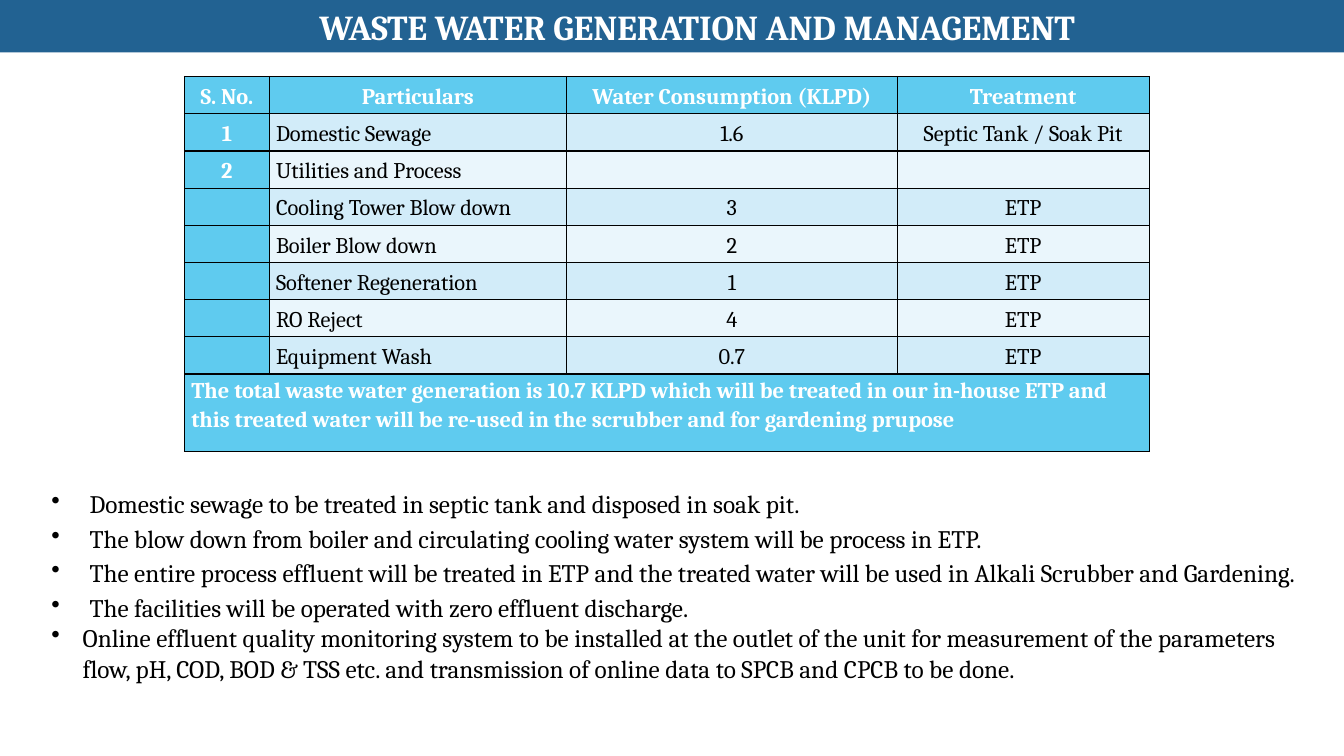
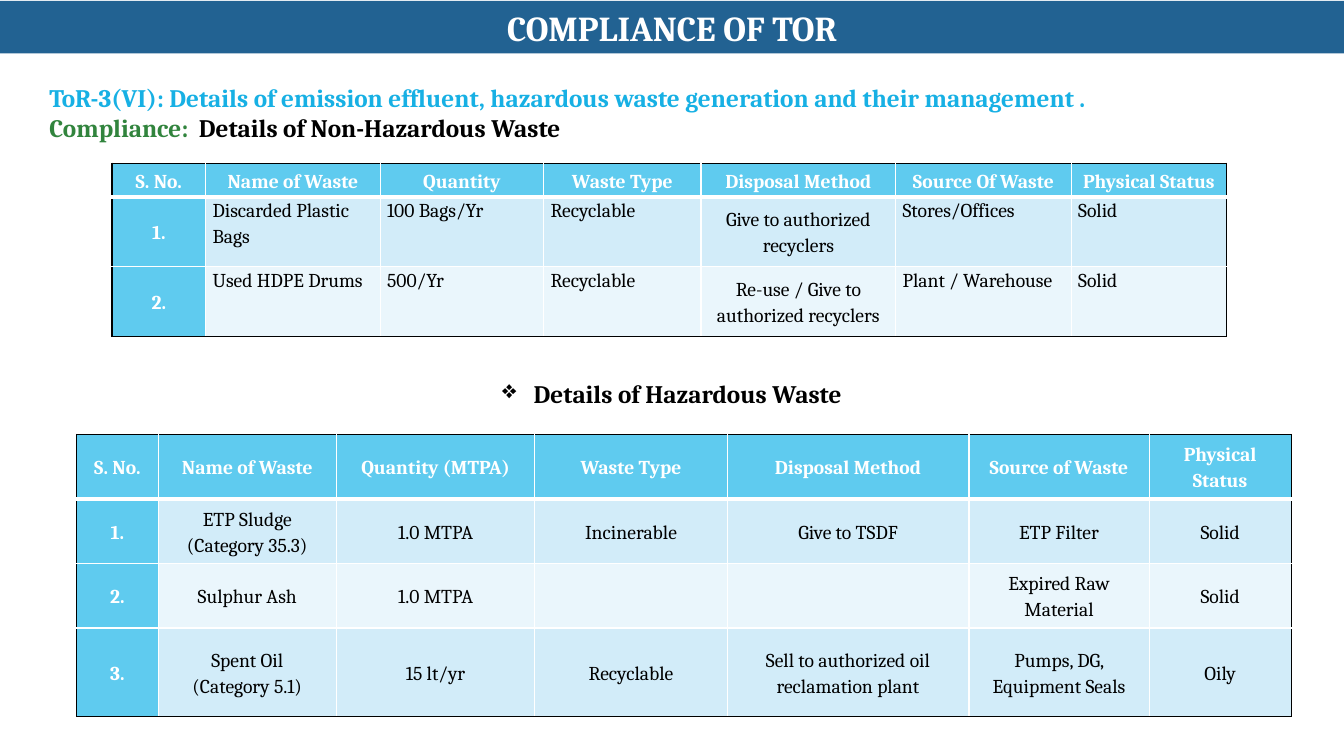
from dataclasses import dataclass

from lxml.etree import SubElement
from pptx import Presentation
from pptx.dml.color import RGBColor
from pptx.enum.shapes import MSO_SHAPE
from pptx.enum.text import MSO_ANCHOR, MSO_AUTO_SIZE, PP_ALIGN
from pptx.oxml.ns import qn
from pptx.util import Inches, Pt

WIDTH, HEIGHT = Inches(13.33), Inches(7.5)
ALIGN = {"l": PP_ALIGN.LEFT, "c": PP_ALIGN.CENTER}


@dataclass(frozen=True)
class Theme:
    font: str = "Cambria"
    band: str = "226292"
    head: str = "5FCBEF"
    odd: str = "D2ECF9"
    even: str = "EAF6FC"
    topic: str = "17B0E4"
    reply: str = "31843D"
    ink: str = "000000"
    paper: str = "FFFFFF"
    title: int = 25
    body: int = 18
    large: int = 16
    small: int = 14
    lead: float = 1.15


THEME = Theme()


def across(share):
    """Length of a percentage of the slide's width."""
    return round(WIDTH * share / 100)


def down(share):
    """Length of a percentage of the slide's height."""
    return round(HEIGHT * share / 100)


def place(left, top, width, height):
    return across(left), down(top), across(width), down(height)


def paint(fill, color):
    fill.solid()
    fill.fore_color.rgb = RGBColor.from_string(color)


def write(frame, text, size=THEME.body, color=THEME.ink, bold=False,
          align="l", lead=None, bullet=None, left=0, hang=0, tab=None):
    """Add one paragraph; text is a string or a list of (string, colour)."""
    para = frame.paragraphs[0]
    if para.runs:
        para = frame.add_paragraph()
    para.alignment = ALIGN[align]
    if lead:
        para.line_spacing = lead
    props = para._p.get_or_add_pPr()
    if left or hang:
        props.set("marL", str(across(left + hang)))
        props.set("indent", str(-across(hang)))
    if bullet:
        SubElement(props, qn("a:buChar"), char=bullet)
    if tab:
        tabs = SubElement(props, qn("a:tabLst"))
        SubElement(tabs, qn("a:tab"), pos=str(across(tab)), algn="l")
    if not text:
        SubElement(para._p, qn("a:endParaRPr"), sz=str(size * 100))
        return
    for part, tint in [(text, color)] if isinstance(text, str) else text:
        run = para.add_run()
        run.text = part
        run.font.name = THEME.font
        run.font.size = Pt(size)
        run.font.bold = bold
        run.font.color.rgb = RGBColor.from_string(tint)


def edge(cell, sides):
    """Draw cell borders from a dict of side: (colour, points)."""
    props = cell._tc.get_or_add_tcPr()
    for side in "LRTB":
        color, width = sides[side]
        line = SubElement(props, qn("a:ln" + side), w=str(Pt(width)))
        fill = SubElement(line, qn("a:solidFill"))
        SubElement(fill, qn("a:srgbClr"), val=color)


def divide(items, weights, total, field):
    """Share a total length among table rows or columns by weight."""
    for item, weight in zip(items, weights):
        setattr(item, field, round(total * weight / sum(weights)))


class Deck:
    def __init__(self, theme):
        self.theme = theme
        self.show = Presentation()
        self.show.slide_width, self.show.slide_height = WIDTH, HEIGHT
        self.slide = None

    def page(self, title, top=0, left=0):
        """Start a slide with its title band."""
        look = self.theme
        self.slide = self.show.slides.add_slide(self.show.slide_layouts[6])
        band = self.slide.shapes.add_shape(
            MSO_SHAPE.RECTANGLE, *place(0, top, 100, 6.93))
        band.shadow.inherit = False
        band.line.fill.background()
        paint(band.fill, look.band)
        frame = band.text_frame
        frame.word_wrap = True
        frame.auto_size = MSO_AUTO_SIZE.SHAPE_TO_FIT_TEXT
        frame.vertical_anchor = MSO_ANCHOR.MIDDLE
        write(frame, title, size=look.title, color=look.paper, bold=True,
              align="c", left=left)

    def box(self, *area):
        """Add a text box and return its frame."""
        frame = self.slide.shapes.add_textbox(*place(*area)).text_frame
        frame.word_wrap = True
        frame.auto_size = MSO_AUTO_SIZE.SHAPE_TO_FIT_TEXT
        return frame

    def grid(self, area, cols, rows, data, size, align, inner, rule=1,
             high=False, total=False):
        """Add a table.

        cols and rows are weights, inner is the colour of inside lines and
        rule the width under the heading; high lifts left-aligned cells to
        the top, and total merges the last row.
        """
        look = self.theme
        left, top, width, height = place(*area)
        table = self.slide.shapes.add_table(
            len(rows), len(cols), left, top, width, height).table
        table.first_row = table.horz_banding = False
        divide(table.columns, cols, width, "width")
        divide(table.rows, rows, height, "height")
        last, end = len(rows) - 1, len(cols) - 1
        for r, texts in enumerate(data):
            foot = total and r == last
            for c, text in enumerate(texts):
                cell = table.cell(r, c)
                key = r == 0 or c == 0 or foot
                side = "l" if foot else "c" if key else align[c]
                thin, rim = (inner, 1), (look.ink, 1)
                edge(cell, {
                    "L": thin if c else rim,
                    "R": thin if c < end else rim,
                    "T": thin if r else rim,
                    "B": rim if r == last else thin if r else (inner, rule),
                })
                paint(cell.fill, look.head if key
                      else look.odd if r % 2 else look.even)
                cell.margin_left = cell.margin_right = across(0.51)
                cell.margin_top = cell.margin_bottom = 0
                raised = foot or (high and side == "l")
                cell.vertical_anchor = (
                    MSO_ANCHOR.TOP if raised else MSO_ANCHOR.MIDDLE)
                for line in text.split("\n"):
                    write(cell.text_frame, line, size=size, bold=key,
                          color=look.paper if key else look.ink,
                          align=side, lead=look.lead)
        if total:
            table.cell(last, 0).merge(table.cell(last, end))


def water(deck):
    look = deck.theme
    deck.page("WASTE WATER GENERATION AND MANAGEMENT", left=3.75)
    sources = [("Cooling Tower Blow down", "3"), ("Boiler Blow down", "2"),
               ("Softener Regeneration", "1"), ("RO Reject", "4"),
               ("Equipment Wash", "0.7")]
    data = [
        ("S. No.", "Particulars", "Water Consumption (KLPD)", "Treatment"),
        ("1", "Domestic Sewage", "1.6", "Septic Tank / Soak Pit"),
        ("2", "Utilities and Process", "", ""),
        *[("", name, load, "ETP") for name, load in sources],
        ("The total waste water generation is 10.7 KLPD which will be "
         "treated in our in-house ETP and this treated water will be "
         "re-used in the scrubber and for gardening prupose", "", "", ""),
    ]
    deck.grid((13.73, 10.13, 71.78, 49.6), [0.84, 2.95, 3.28, 2.5],
              [0.37] * 8 + [0.77], data, look.large, "clcc",
              inner=look.ink, total=True)
    frame = deck.box(3.08, 63.33, 94.8, 32.67)
    for point in (
        "Domestic sewage to be treated in septic tank and disposed in "
        "soak pit.",
        "The blow down from boiler and circulating cooling water system "
        "will be process in ETP.",
        "The entire process effluent will be treated in ETP and the treated "
        "water will be used in Alkali Scrubber and Gardening.",
        "The facilities will be operated with zero effluent discharge.",
    ):
        write(frame, point, bullet="•", hang=2.85, lead=look.lead)
    write(frame, "Online effluent quality monitoring system to be installed "
          "at the outlet of the unit for measurement of the parameters flow, "
          "pH, COD, BOD & TSS etc. and transmission of online data to SPCB "
          "and CPCB to be done.", bullet="•", hang=2.34)


def waste(deck):
    look = deck.theme
    deck.page("COMPLIANCE OF TOR", top=0.13)
    frame = deck.box(2.93, 10.27, 93.15, 9.47)
    write(frame, "ToR-3(VI): Details of emission effluent, hazardous waste "
          "generation and their management .", color=look.topic, bold=True)
    write(frame, [("Compliance:\t", look.reply),
                  ("Details of Non-Hazardous Waste", look.ink)],
          bold=True, tab=11.13)
    plain = [
        ("S. No.", "Name of Waste", "Quantity", "Waste Type",
         "Disposal Method", "Source Of Waste", "Physical Status"),
        ("1.", "Discarded Plastic Bags", "100 Bags/Yr", "Recyclable",
         "Give to authorized recyclers", "Stores/Offices", "Solid"),
        ("2.", "Used HDPE Drums", "500/Yr", "Recyclable",
         "Re-use / Give to authorized recyclers", "Plant / Warehouse",
         "Solid"),
    ]
    deck.grid((8.33, 21.6, 82.95, 22.93),
              [0.93, 1.73, 1.62, 1.56, 1.93, 1.74, 1.54],
              [0.33, 0.69, 0.69], plain, look.small, "clllcll",
              inner=look.paper, rule=3, high=True)
    write(deck.box(0, 49.33, 100, 5.33), "Details of Hazardous Waste",
          bold=True, align="c", bullet="❖", hang=2.34)
    risky = [
        ("S. No.", "Name of Waste", "Quantity (MTPA)", "Waste Type",
         "Disposal Method", "Source of Waste", "Physical Status"),
        ("1.", "ETP Sludge\n(Category 35.3)", "1.0 MTPA", "Incinerable",
         "Give to TSDF", "ETP Filter", "Solid"),
        ("2.", "Sulphur Ash", "1.0 MTPA", "", "", "Expired Raw Material",
         "Solid"),
        ("3.", "Spent Oil\n(Category 5.1)", "15 lt/yr", "Recyclable",
         "Sell to authorized oil reclamation plant",
         "Pumps, DG, Equipment Seals", "Oily"),
    ]
    deck.grid((5.7, 57.47, 90.38, 37.33),
              [0.81, 1.77, 1.97, 1.91, 2.4, 1.79, 1.41],
              [0.64, 0.64, 0.64, 0.88], risky, look.small, "c" * 7,
              inner=look.paper, rule=3)


def main():
    deck = Deck(THEME)
    water(deck)
    waste(deck)
    deck.show.save("out.pptx")


if __name__ == "__main__":
    main()
